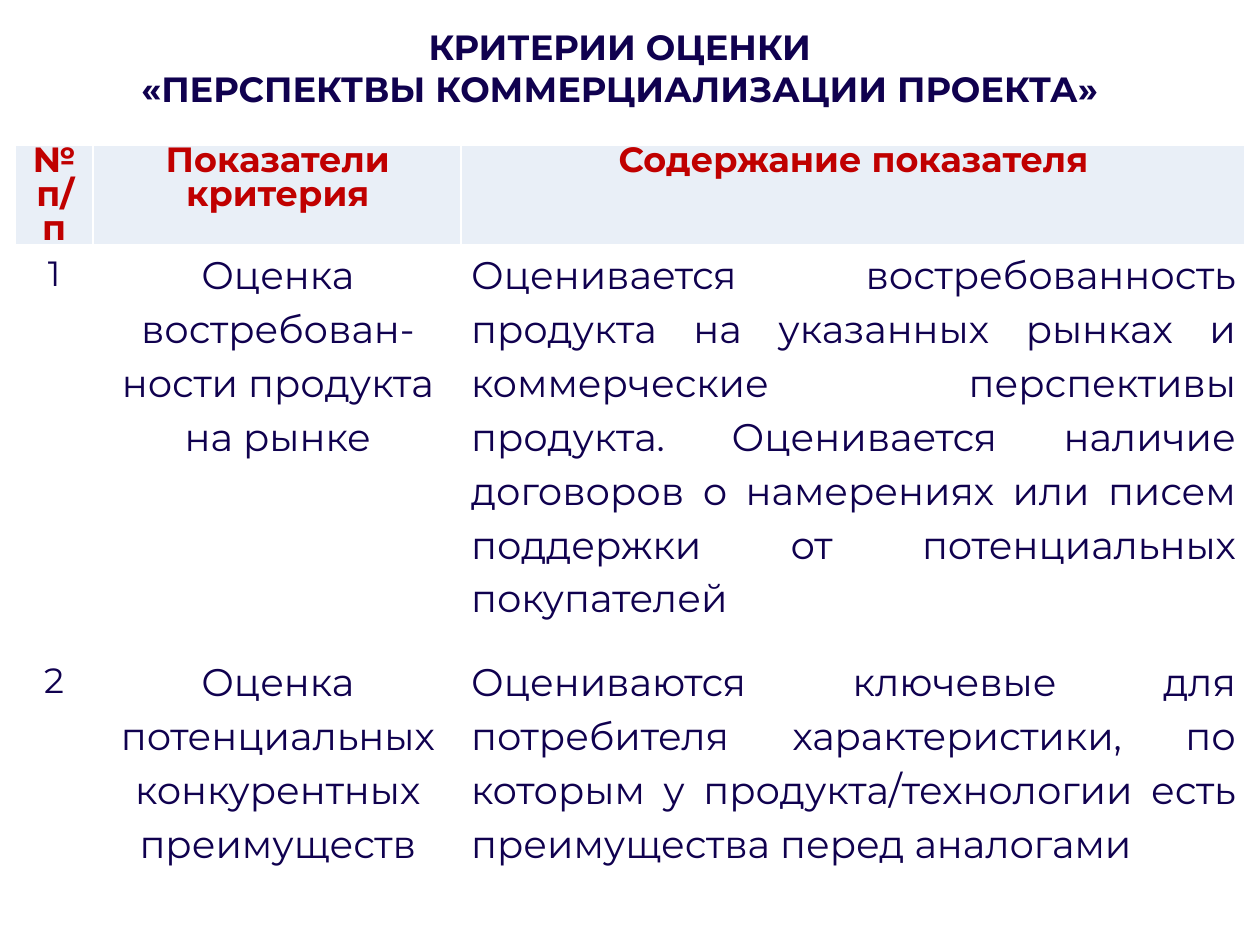
from dataclasses import dataclass

from lxml.etree import SubElement
from pptx import Presentation
from pptx.dml.color import RGBColor
from pptx.enum.text import MSO_ANCHOR as Anchor, PP_ALIGN as Align
from pptx.oxml.ns import qn
from pptx.util import Inches, Pt

TITLE = "КРИТЕРИИ ОЦЕНКИ\v«ПЕРСПЕКТВЫ КОММЕРЦИАЛИЗАЦИИ ПРОЕКТА»"
HEADINGS = ("№\nп/п", "Показатели критерия", "Содержание показателя")
CRITERIA = [
    ("1", "Оценка востребован-ности продукта на рынке",
     "Оценивается востребованность продукта на указанных рынках и "
     "коммерческие перспективы продукта. Оценивается наличие договоров "
     "о намерениях или писем поддержки от потенциальных покупателей"),
    ("2", "Оценка потенциальных конкурентных преимуществ",
     "Оцениваются ключевые для потребителя характеристики, по которым "
     "у продукта/технологии есть преимущества перед аналогами"),
]
COLUMN_WIDTHS = (0.62, 2.92, 6.22)
ROW_HEIGHTS = (0.79, 3.23, 1.92)


@dataclass(frozen=True)
class Theme:
    font: str = "Montserrat"
    navy: str = "10014F"
    red: str = "C00000"
    header_fill: str = "E9EFF7"
    border: str = "FFFFFF"
    base_size: int = 20
    body_size: int = 22


THEME = Theme()


def format_text(frame, color, size, bold, align, spacing=None):
    for paragraph in frame.paragraphs:
        paragraph.alignment = align
        paragraph.line_spacing = spacing
        for run in paragraph.runs:
            run.font.name = THEME.font
            run.font.size = Pt(size)
            run.font.bold = bold
            run.font.color.rgb = RGBColor.from_string(color)


def set_borders(cell, bottom_width):
    properties = cell._tc.get_or_add_tcPr()
    for side, width in (("L", 1), ("R", 1), ("T", 1), ("B", bottom_width)):
        line = SubElement(properties, qn(f"a:ln{side}"), w=str(Pt(width)))
        fill = SubElement(line, qn("a:solidFill"))
        SubElement(fill, qn("a:srgbClr"), val=THEME.border)


def fill_cell(cell, text, row, column):
    is_header = row == 0
    is_number = column == 0 and not is_header
    cell.text_frame.text = text
    set_borders(cell, 3 if is_header else 1)
    if not is_number:
        cell.margin_left = Inches(0.09 if column == 0 else 0.08)
        cell.margin_right = Inches(0.09 if column == 0 else 0.07)
        cell.margin_top = cell.margin_bottom = 0
    if is_header:
        cell.fill.solid()
        cell.fill.fore_color.rgb = RGBColor.from_string(THEME.header_fill)
        format_text(cell.text_frame, THEME.red, THEME.base_size, True, Align.CENTER, 0.8)
    else:
        cell.fill.background()
        align = Align.JUSTIFY if column == 2 else Align.CENTER
        size, spacing = (THEME.base_size, None) if is_number else (THEME.body_size, 1.15)
        format_text(cell.text_frame, THEME.navy, size, False, align, spacing)


def add_title(slide):
    heading = slide.shapes.add_textbox(
        Inches(0.04), Inches(-0.19), Inches(9.76), Inches(1.31)).text_frame
    heading.word_wrap = True
    heading.vertical_anchor = Anchor.MIDDLE
    heading.margin_top = Inches(0.19)
    heading.paragraphs[0].text = TITLE
    format_text(heading, THEME.navy, THEME.base_size, True, Align.CENTER)


def add_criteria(slide):
    rows = [HEADINGS, *CRITERIA]
    criteria = slide.shapes.add_table(
        len(rows), len(HEADINGS), Inches(0.12), Inches(1.15),
        Inches(sum(COLUMN_WIDTHS)), Inches(sum(ROW_HEIGHTS))).table
    for column, width in zip(criteria.columns, COLUMN_WIDTHS):
        column.width = Inches(width)
    for row, height in zip(criteria.rows, ROW_HEIGHTS):
        row.height = Inches(height)
    for r, texts in enumerate(rows):
        for c, text in enumerate(texts):
            fill_cell(criteria.cell(r, c), text, r, c)


def main():
    """Build the slide of commercialization criteria."""
    deck = Presentation()
    deck.slide_width, deck.slide_height = Inches(10), Inches(7.5)
    slide = deck.slides.add_slide(deck.slide_layouts[6])
    add_title(slide)
    add_criteria(slide)
    deck.save("out.pptx")


if __name__ == "__main__":
    main()
